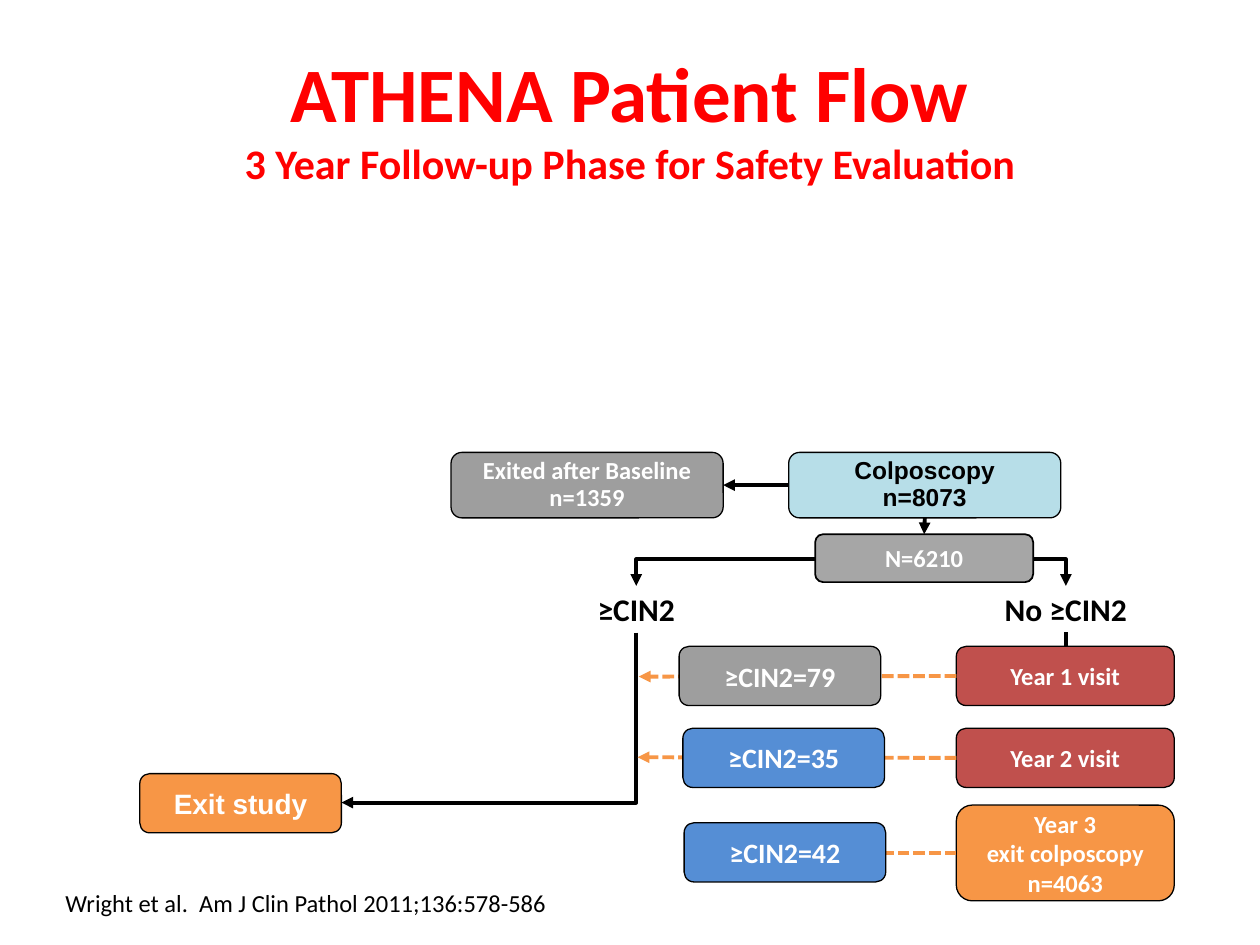
from dataclasses import dataclass

from pptx import Presentation
from pptx.dml.color import RGBColor
from pptx.enum.dml import MSO_LINE
from pptx.enum.shapes import MSO_CONNECTOR, MSO_SHAPE
from pptx.enum.text import MSO_ANCHOR, PP_ALIGN
from pptx.oxml.ns import qn
from pptx.oxml.xmlchemy import OxmlElement
from pptx.shapes.autoshape import Shape
from pptx.shapes.connector import Connector
from pptx.slide import Slide
from pptx.text.text import TextFrame
from pptx.util import Inches, Pt

ROUNDED = MSO_SHAPE.ROUNDED_RECTANGLE
DECISION = MSO_SHAPE.FLOWCHART_DECISION
STRAIGHT = MSO_CONNECTOR.STRAIGHT
ELBOW = MSO_CONNECTOR.ELBOW
DASHED = MSO_LINE.SQUARE_DOT
CENTER = PP_ALIGN.CENTER
LEFT = PP_ALIGN.LEFT
MIDDLE = MSO_ANCHOR.MIDDLE
TOP_SIDE, LEFT_SIDE, BOTTOM_SIDE, RIGHT_SIDE = range(4)

COLORS = {
    "black": "000000", "white": "FFFFFF", "title": "FF0000",
    "orange": "F79646", "red": "C0504D", "blue": "558ED5",
    "light blue": "B7DEE8", "gray": "9E9E9E", "light gray": "A6A6A6",
}
Point = tuple[float, float]


@dataclass(frozen=True)
class TextStyle:
    size: float
    color: str = "white"
    bold: bool = True
    font: str = "Calibri"
    line_spacing: float | None = None
    space_before: float = 0


@dataclass(frozen=True)
class Node:
    """A flow-chart step; each paragraph is a tuple of lines."""
    left: float
    top: float
    width: float
    height: float
    paragraphs: tuple[tuple[str, ...], ...]
    style: TextStyle
    fill: str | None = None
    outline: float = 0.75


VISIT_TEXT = TextStyle(14)
CASE_TEXT = TextStyle(16)
LABEL_TEXT = TextStyle(18, "black")

VISIT_LEFT, VISIT_WIDTH, STEP_HEIGHT = 7.59, 1.73, 0.47
STEP_WIDTH = 1.6
START_TOP, START_WIDTH, START_HEIGHT = 3.59, 2.16, 0.52
LABEL_TOP, LABEL_WIDTH, LABEL_HEIGHT = 4.65, 1.4, 0.37
LABEL_BOTTOM = LABEL_TOP + LABEL_HEIGHT
BRANCH_Y = 4.44
CASE_X, NO_CASE_X = 5.05, 8.46

COLPOSCOPY = Node(6.26, START_TOP, START_WIDTH, START_HEIGHT, (("Colposcopy", "n=8073"),),
                  TextStyle(14, "black", font="Arial", line_spacing=0.9), "light blue")
EXITED = Node(3.58, START_TOP, START_WIDTH, START_HEIGHT,
              (("Exited after Baseline", "n=1359"),),
              TextStyle(14, line_spacing=0.9), "gray")
FOLLOWED = Node(6.47, 4.24, VISIT_WIDTH, 0.38, (("N=6210",),),
                TextStyle(14, space_before=3), "light gray", 1)
EXIT_STUDY = Node(1.11, 6.14, STEP_WIDTH, STEP_HEIGHT, (("Exit study",),),
                  TextStyle(16, font="Arial"), "orange")
VISITS = (
    Node(VISIT_LEFT, 5.13, VISIT_WIDTH, STEP_HEIGHT, (("Year 1 visit",),), VISIT_TEXT, "red"),
    Node(VISIT_LEFT, 5.78, VISIT_WIDTH, STEP_HEIGHT, (("Year 2 visit",),), VISIT_TEXT, "red"),
    Node(VISIT_LEFT, 6.39, VISIT_WIDTH, 0.76,
         (("Year 3",), ("exit colposcopy",), ("n=4063",)), VISIT_TEXT, "orange"),
)
VISIT_ARROW_ENDS = ((5.07, 5.37), (5.06, 6.01), (6.87, 6.77))
CASES = (
    Node(5.39, 5.13, STEP_WIDTH, STEP_HEIGHT, (("≥CIN2=79",),), CASE_TEXT, "gray"),
    Node(5.42, 5.78, STEP_WIDTH, STEP_HEIGHT, (("≥CIN2=35",),), CASE_TEXT, "blue"),
    Node(5.43, 6.53, STEP_WIDTH, STEP_HEIGHT, (("≥CIN2=42",),), CASE_TEXT, "blue"),
)
LABELS = tuple(
    Node(x - LABEL_WIDTH / 2, LABEL_TOP, LABEL_WIDTH, LABEL_HEIGHT, ((text,),), LABEL_TEXT)
    for x, text in ((CASE_X, "≥CIN2"), (NO_CASE_X, "No ≥CIN2"))
)


def rgb(name: str) -> RGBColor:
    return RGBColor.from_string(COLORS[name])


def add_paragraph(frame: TextFrame, lines: list[tuple[str, TextStyle]],
                  alignment: PP_ALIGN, first: bool = True) -> None:
    """Write styled lines, split by line breaks, as one paragraph."""
    paragraph = frame.paragraphs[0] if first else frame.add_paragraph()
    paragraph.alignment = alignment
    paragraph.line_spacing = lines[0][1].line_spacing
    paragraph.space_before = Pt(lines[0][1].space_before)
    for index, (text, style) in enumerate(lines):
        if index:
            paragraph.add_line_break()
        run = paragraph.add_run()
        run.text = text
        run.font.name = style.font
        run.font.size = Pt(style.size)
        run.font.bold = style.bold
        run.font.color.rgb = rgb(style.color)


def add_node(slide: Slide, node: Node) -> Shape:
    shape = slide.shapes.add_shape(
        ROUNDED if node.fill else DECISION,
        Inches(node.left), Inches(node.top), Inches(node.width), Inches(node.height))
    shape.shadow.inherit = False
    if node.fill:
        shape.fill.solid()
        shape.fill.fore_color.rgb = rgb(node.fill)
        shape.line.color.rgb = rgb("black")
        shape.line.width = Pt(node.outline)
    else:
        shape.fill.background()
        shape.line.fill.background()
    frame = shape.text_frame
    frame.word_wrap = node.fill is not None
    frame.vertical_anchor = MIDDLE
    frame.margin_left = frame.margin_right = Inches(0.02)
    frame.margin_top = frame.margin_bottom = Inches(0.02)
    for index, lines in enumerate(node.paragraphs):
        add_paragraph(frame, [(line, node.style) for line in lines], CENTER, index == 0)
    return shape


def add_arrow(slide: Slide, start: Point, end: Point, color: str = "black",
              kind: MSO_CONNECTOR = STRAIGHT) -> Connector:
    connector = slide.shapes.add_connector(kind, *(Inches(value) for value in start + end))
    connector.line.color.rgb = rgb(color)
    connector.line.width = Pt(2.25)
    head = OxmlElement("a:tailEnd")
    head.set("type", "triangle")
    connector.line._get_or_add_ln().append(head)
    properties = connector._element.spPr
    properties.append(OxmlElement("a:effectLst"))
    if kind == ELBOW:
        properties.find(qn("a:prstGeom")).set("prst", "bentConnector2")
    return connector


def add_down_left_arrow(slide: Slide, start: Point, end: Point) -> None:
    """Draw a one-bend arrow that goes down first, as a quarter-turned elbow."""
    center_x, center_y = (start[0] + end[0]) / 2, (start[1] + end[1]) / 2
    half_width, half_height = (end[1] - start[1]) / 2, (start[0] - end[0]) / 2
    connector = add_arrow(slide, (center_x - half_width, center_y - half_height),
                          (center_x + half_width, center_y + half_height), kind=ELBOW)
    connector._element.spPr.find(qn("a:xfrm")).set("rot", str(90 * 60000))


def add_text(slide: Slide, box: tuple[float, float, float, float],
             lines: list[tuple[str, TextStyle]], alignment: PP_ALIGN) -> TextFrame:
    frame = slide.shapes.add_textbox(*(Inches(value) for value in box)).text_frame
    frame.word_wrap = True
    add_paragraph(frame, lines, alignment)
    return frame


def main() -> None:
    presentation = Presentation()
    presentation.slide_width, presentation.slide_height = Inches(10), Inches(7.5)
    slide = presentation.slides.add_slide(presentation.slide_layouts[6])

    title = add_text(slide, (0.5, 0.3, 9, 1.25), [
        ("ATHENA Patient Flow", TextStyle(44, "title")),
        ("3 Year Follow-up Phase for Safety Evaluation", TextStyle(24, "title")),
    ], CENTER)
    title.vertical_anchor = MIDDLE

    for label in LABELS:
        add_node(slide, label)
    add_arrow(slide, (NO_CASE_X, LABEL_BOTTOM), (NO_CASE_X, 5.43))
    add_node(slide, EXIT_STUDY)
    add_down_left_arrow(slide, (CASE_X, LABEL_BOTTOM), (2.71, 6.37))

    for visit, end in zip(VISITS, VISIT_ARROW_ENDS):
        shape = add_node(slide, visit)
        arrow = add_arrow(slide, (VISIT_LEFT, end[1]), end, "orange")
        arrow.line.dash_style = DASHED
        arrow.begin_connect(shape, LEFT_SIDE)
    for case in CASES:
        add_node(slide, case)

    colposcopy, exited, followed = (
        add_node(slide, node) for node in (COLPOSCOPY, EXITED, FOLLOWED))
    for begin_side, target, end_side in (
            (LEFT_SIDE, exited, RIGHT_SIDE), (BOTTOM_SIDE, followed, TOP_SIDE)):
        arrow = add_arrow(slide, (6.26, 3.85), (5.74, 3.85))
        arrow.begin_connect(colposcopy, begin_side)
        arrow.end_connect(target, end_side)
    for start_x, end_x in ((6.47, CASE_X), (8.2, NO_CASE_X)):
        add_arrow(slide, (start_x, BRANCH_Y), (end_x, LABEL_TOP), kind=ELBOW)

    add_text(slide, (0.42, 7, 5.65, 0.34), [
        ("Wright et al.  Am J Clin Pathol 2011;136:578-586",
         TextStyle(14, "black", bold=False)),
    ], LEFT)
    presentation.save("out.pptx")


if __name__ == "__main__":
    main()
